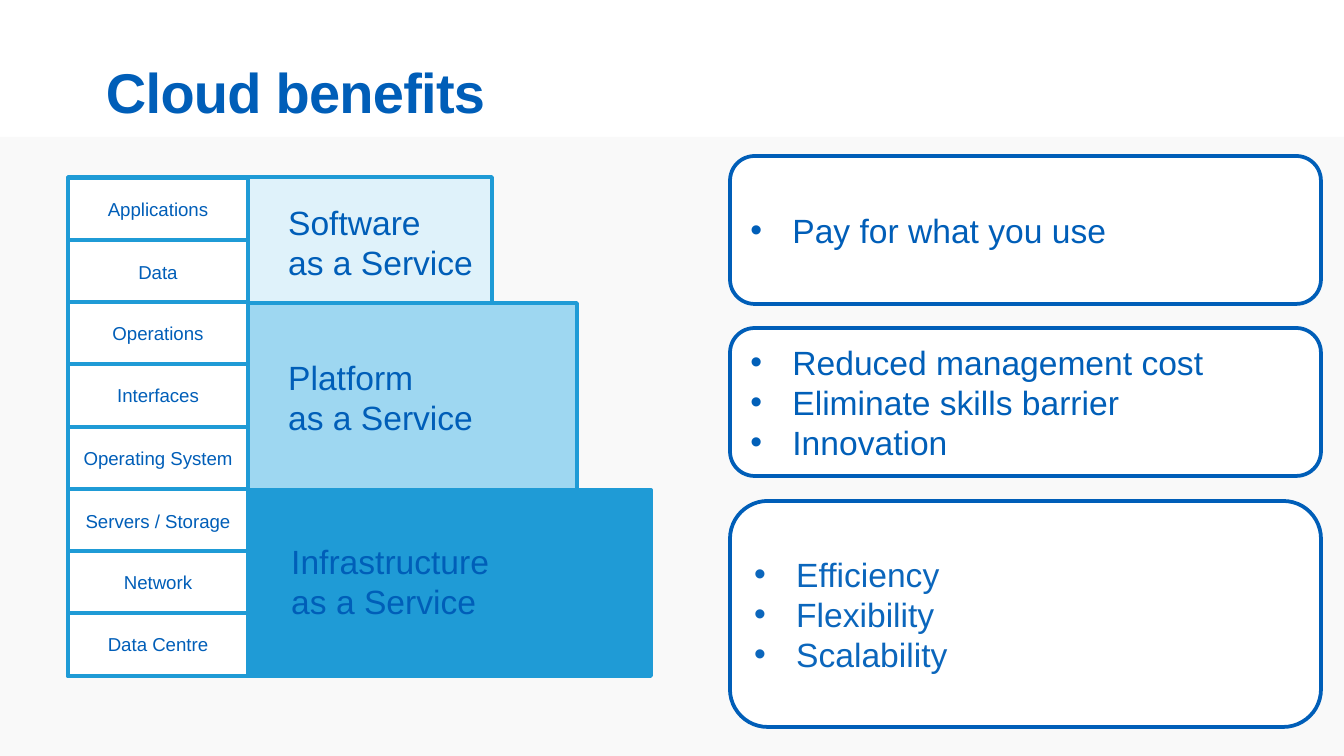
from lxml import etree
from pptx import Presentation
from pptx.dml.color import RGBColor
from pptx.enum.shapes import MSO_SHAPE
from pptx.enum.text import MSO_ANCHOR, PP_ALIGN
from pptx.oxml.ns import qn
from pptx.util import Pt

RECT, ROUNDED = MSO_SHAPE.RECTANGLE, MSO_SHAPE.ROUNDED_RECTANGLE
MIDDLE = MSO_ANCHOR.MIDDLE
LEFT, CENTER = PP_ALIGN.LEFT, PP_ALIGN.CENTER
PX = 914400 / 134.4
BLUE, SKY, WHITE = "005EB8", "1F9BD6", "FFFFFF"

deck = Presentation()
deck.slide_width, deck.slide_height = round(1344 * PX), round(756 * PX)
page = deck.slides.add_slide(deck.slide_layouts[5])


def add_box(kind, left, top, width, height, fill, line=None):
    box = page.shapes.add_shape(kind, *(round(v * PX) for v in (left, top, width, height)))
    box.shadow.inherit = False
    box.fill.solid()
    box.fill.fore_color.rgb = RGBColor.from_string(fill)
    if line:
        box.line.color.rgb = RGBColor.from_string(line)
        box.line.width = Pt(2)
    else:
        box.line.fill.background()
    return box


def write(frame, lines, size, color=BLUE, align=LEFT):
    """Fill a text frame with one paragraph per line."""
    for i, line in enumerate(lines):
        para = frame.paragraphs[0] if i == 0 else frame.add_paragraph()
        para.text = line
        para.alignment = align
        para.font.name, para.font.size = "Arial", Pt(size)
        para.font.color.rgb = RGBColor.from_string(color)


# Grey page body
add_box(RECT, 0, 137, 1344, 619, "F9F9F9")

# Title
title = page.shapes.title
title.left, title.top, title.width, title.height = (round(v * PX) for v in (106, 52, 1122, 78))
frame = title.text_frame
frame.margin_left = frame.margin_right = frame.margin_top = frame.margin_bottom = 0
frame.vertical_anchor = MIDDLE
write(frame, ["Cloud benefits"], 30)
frame.paragraphs[0].font.bold = True
frame.paragraphs[0].runs[0]._r.get_or_add_rPr().set("spc", "-40")

# Service bands, stacked on a shared bottom edge
STACK_LEFT, STACK_BOTTOM = 68, 676
for top, width, fill in [(177, 424, "DFF2FA"), (303, 509, "9ED7F1"), (490, 583, SKY)]:
    add_box(RECT, STACK_LEFT, top, width, STACK_BOTTOM - top, fill, SKY)

# Layers of the stack
layers = ["Applications", "Data", "Operations", "Interfaces", "Operating System",
          "Servers / Storage", "Network", "Data Centre"]
for i, layer in enumerate(layers):
    cell = add_box(RECT, STACK_LEFT, 178 + round(62.15 * i), 180, 63, WHITE, SKY)
    cell.text_frame.vertical_anchor = MIDDLE
    write(cell.text_frame, [layer], 10, align=CENTER)

# Service names
for service, left, top, width in [("Software", 275, 195, 214), ("Platform", 275, 350, 214),
                                  ("Infrastructure", 278, 534, 237)]:
    label = page.shapes.add_textbox(*(round(v * PX) for v in (left, top, width, 95)))
    label.text_frame.word_wrap = False
    write(label.text_frame, [service, "as a Service"], 18)

# Benefits of each service
benefits = [
    (156, 148, BLUE, ["Pay for what you use"]),
    (328, 148, "015FB8", ["Reduced management cost", "Eliminate skills barrier", "Innovation"]),
    (501, 226, "0B66BC", ["Efficiency", "Flexibility", "Scalability"]),
]
indent = round(42 * PX)
for top, height, color, lines in benefits:
    card = add_box(ROUNDED, 730, top, 591, height, WHITE, BLUE)
    card.text_frame.vertical_anchor = MIDDLE
    write(card.text_frame, lines, 18, color)
    for para in card.text_frame.paragraphs:
        props = para._p.get_or_add_pPr()
        props.set("marL", str(indent))
        props.set("indent", str(-indent))
        bullet_font = etree.Element(qn("a:buFont"), typeface="Arial")
        bullet = etree.Element(qn("a:buChar"), char="•")
        props.insert(0, bullet_font)
        props.insert(1, bullet)

deck.save("out.pptx")
